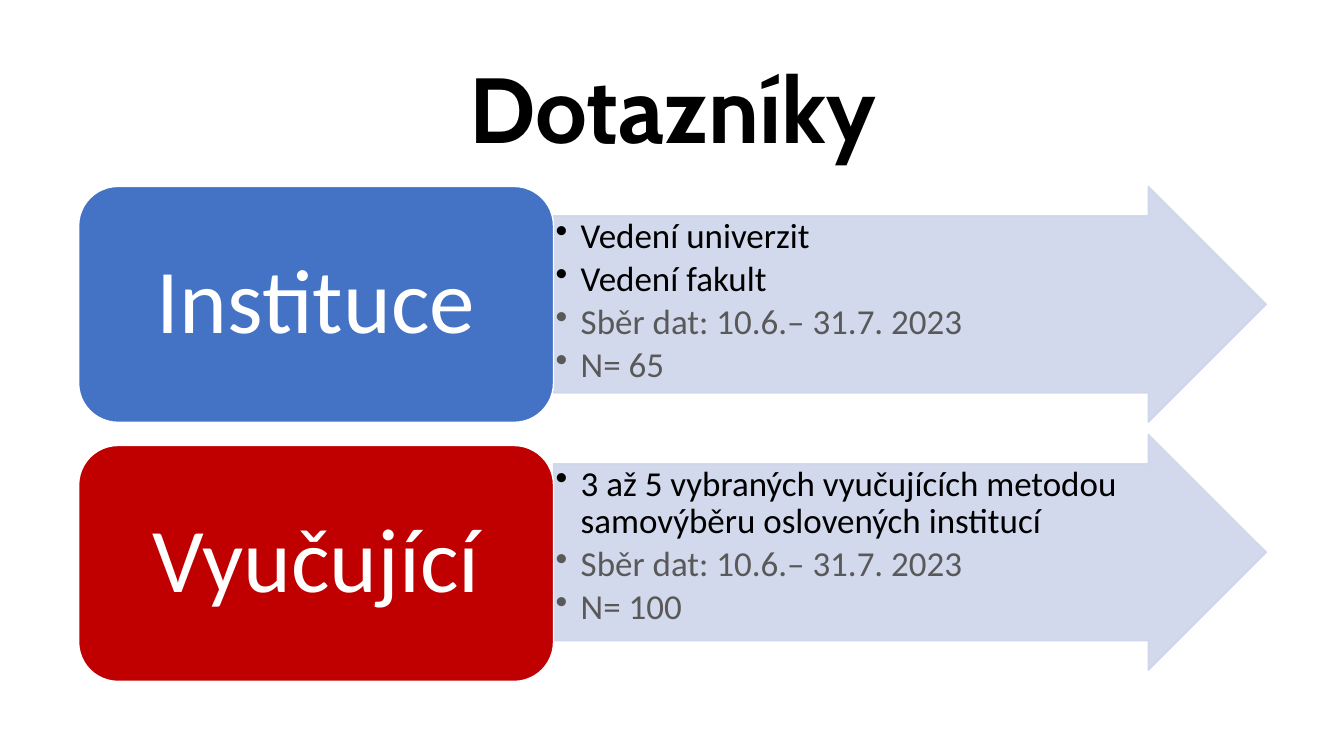
from dataclasses import dataclass

from lxml.etree import SubElement
from pptx import Presentation
from pptx.dml.color import RGBColor
from pptx.dml.fill import FillFormat
from pptx.enum.shapes import MSO_SHAPE
from pptx.enum.text import MSO_ANCHOR, PP_ALIGN
from pptx.oxml.ns import qn
from pptx.shapes.autoshape import Shape
from pptx.slide import Slide
from pptx.text.text import TextFrame
from pptx.util import Inches, Pt

BLACK, GREY, WHITE = "000000", "595959", "FFFFFF"
ARROW_COLOR = "CFD5EA"
BOX_LEFT, BOX_WIDTH = 0.78, 4.71
ARROW_LEFT, ARROW_WIDTH = BOX_LEFT + BOX_WIDTH, 7.07
ROW_HEIGHT = 2.34


@dataclass(frozen=True)
class Bullet:
    text: str
    color: str = BLACK


@dataclass(frozen=True)
class Survey:
    group: str
    color: str
    box_top: float
    arrow_top: float
    bullets: tuple[Bullet, ...]


COLLECTION = Bullet("Sběr dat: 10.6.– 31.7. 2023", GREY)
SURVEYS = (
    Survey("Instituce", "4472C4", 1.85, 1.85, (
        Bullet("Vedení univerzit"),
        Bullet("Vedení fakult"),
        COLLECTION,
        Bullet("N= 65", GREY),
    )),
    Survey("Vyučující", "C00000", 4.42, 4.31, (
        Bullet("3 až 5 vybraných vyučujících metodou samovýběru oslovených institucí"),
        COLLECTION,
        Bullet("N= 100", GREY),
    )),
)


def set_fill(fill: FillFormat, color: str, opacity: int = 100) -> None:
    fill.solid()
    fill.fore_color.rgb = RGBColor.from_string(color)
    if opacity < 100:
        color_element = fill._xPr.find(qn("a:solidFill"))[0]
        SubElement(color_element, qn("a:alpha"), val=str(opacity * 1000))


def add_text(frame: TextFrame, index: int, text: str, size: float, color: str,
             alignment: PP_ALIGN, font_name: str = "Calibri", bold: bool = False):
    """Write one paragraph, reusing the frame's first one, and return it."""
    paragraph = frame.add_paragraph() if index else frame.paragraphs[0]
    paragraph.alignment = alignment
    paragraph.line_spacing = 0.9
    run = paragraph.add_run()
    run.text = text
    run.font.name = font_name
    run.font.size = Pt(size)
    run.font.bold = bold
    set_fill(run.font.fill, color)
    return paragraph


def add_panel(slide: Slide, kind: MSO_SHAPE, left: float, top: float, width: float,
              fill: str, line: str, opacity: int = 100) -> Shape:
    shape = slide.shapes.add_shape(
        kind, Inches(left), Inches(top), Inches(width), Inches(ROW_HEIGHT))
    shape.shadow.inherit = False
    set_fill(shape.fill, fill, opacity)
    set_fill(shape.line.fill, line, opacity)
    shape.line.width = Pt(1)
    return shape


def set_frame(frame: TextFrame, anchor: MSO_ANCHOR, horizontal: float,
              vertical: float) -> None:
    frame.word_wrap = True
    frame.vertical_anchor = anchor
    frame.margin_left = frame.margin_right = Inches(horizontal)
    frame.margin_top = frame.margin_bottom = Inches(vertical)


def add_arrow(slide: Slide, survey: Survey) -> None:
    arrow = add_panel(slide, MSO_SHAPE.RIGHT_ARROW, ARROW_LEFT, survey.arrow_top,
                      ARROW_WIDTH, ARROW_COLOR, ARROW_COLOR, 90)
    arrow.adjustments[0], arrow.adjustments[1] = 0.75, 0.5
    frame = arrow.text_frame
    set_frame(frame, MSO_ANCHOR.TOP, 0.02, 0.02)
    frame.margin_right = Inches(0.6)
    for index, bullet in enumerate(survey.bullets):
        paragraph = add_text(frame, index, bullet.text, 25, bullet.color, PP_ALIGN.LEFT)
        paragraph.level = 1
        paragraph.space_after = Pt(3.75)
        properties = paragraph._p.get_or_add_pPr()
        properties.set("marL", str(Inches(0.25)))
        properties.set("indent", str(Inches(-0.25)))
        SubElement(properties, qn("a:buChar"), char="•")


def add_box(slide: Slide, survey: Survey) -> None:
    box = add_panel(slide, MSO_SHAPE.ROUNDED_RECTANGLE, BOX_LEFT, survey.box_top,
                    BOX_WIDTH, survey.color, WHITE)
    set_frame(box.text_frame, MSO_ANCHOR.MIDDLE, 0.27, 0.14)
    add_text(box.text_frame, 0, survey.group, 65, WHITE, PP_ALIGN.CENTER)


def add_title(slide: Slide, text: str) -> None:
    title = slide.shapes.title
    title.left, title.top = Inches(0.92), Inches(0.4)
    title.width, title.height = Inches(11.5), Inches(1.45)
    title.text_frame.vertical_anchor = MSO_ANCHOR.MIDDLE
    add_text(title.text_frame, 0, text, 66, BLACK, PP_ALIGN.CENTER, "Cabin", True)


def main() -> None:
    presentation = Presentation()
    presentation.slide_width, presentation.slide_height = Inches(13.33), Inches(7.5)
    slide = presentation.slides.add_slide(presentation.slide_layouts[5])
    add_title(slide, "Dotazníky")
    for survey in SURVEYS:
        add_arrow(slide, survey)
        add_box(slide, survey)
    presentation.save("out.pptx")


if __name__ == "__main__":
    main()
